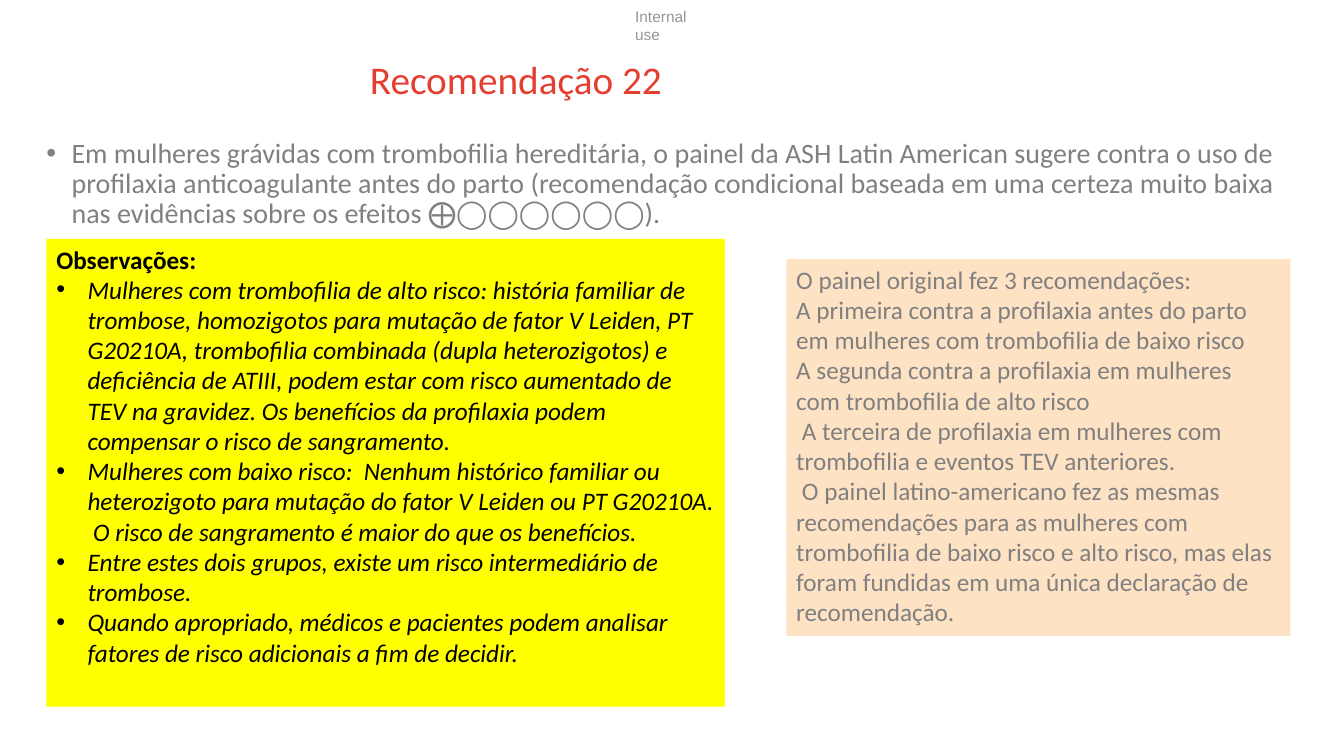
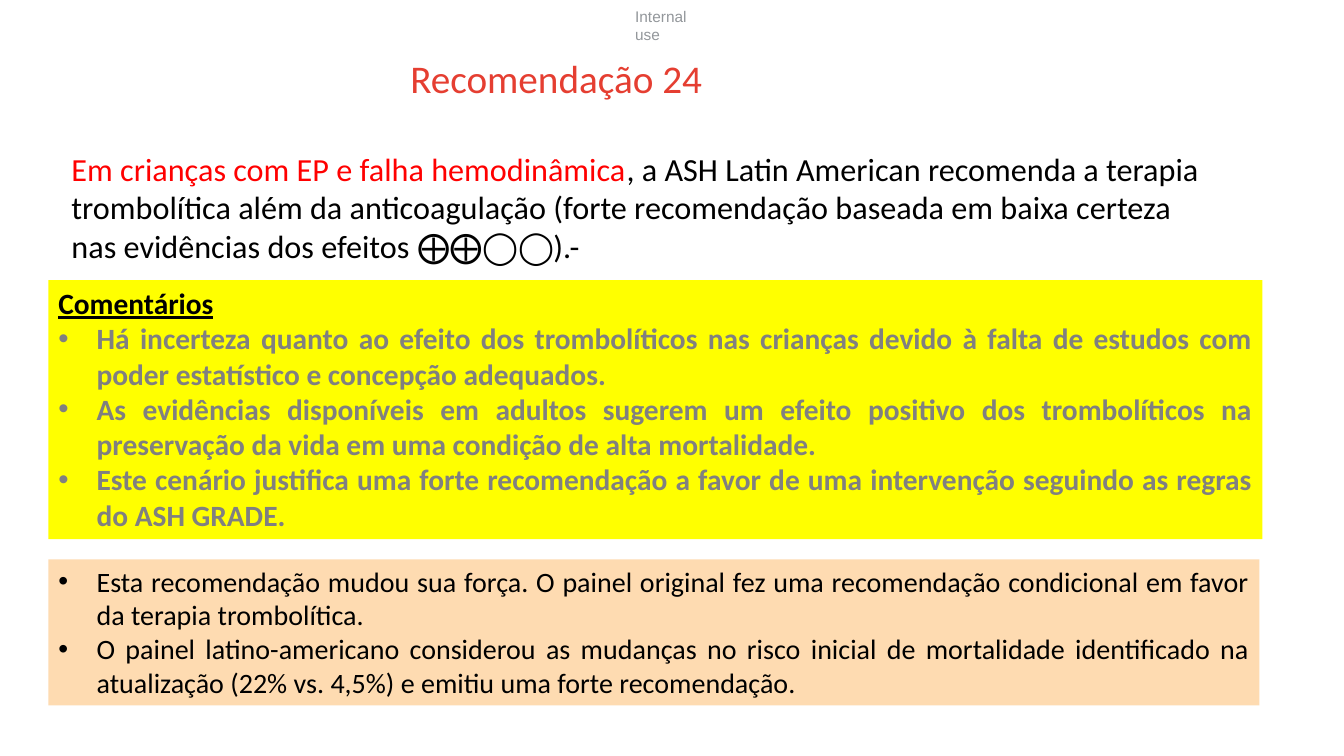
from dataclasses import dataclass, field
from typing import Any, NamedTuple

from lxml import etree
from pptx import Presentation
from pptx.dml.color import RGBColor
from pptx.enum.shapes import MSO_SHAPE
from pptx.enum.text import MSO_ANCHOR, MSO_AUTO_SIZE, PP_ALIGN
from pptx.oxml.ns import qn
from pptx.util import Inches, Pt

RECTANGLE = MSO_SHAPE.RECTANGLE
TOP = MSO_ANCHOR.TOP
FIXED_SIZE = MSO_AUTO_SIZE.NONE
LEFT, JUSTIFY = PP_ALIGN.LEFT, PP_ALIGN.JUSTIFY

SLIDE_WIDTH, SLIDE_HEIGHT = Inches(13.33), Inches(7.5)
BODY_LAYOUT, TITLE_LAYOUT = 1, 5

BLACK = RGBColor(0x00, 0x00, 0x00)
GREY = RGBColor(0x80, 0x80, 0x80)
TAG_GREY = RGBColor(0x93, 0x97, 0x9B)
TITLE_RED = RGBColor(0xE5, 0x3E, 0x31)
RED = RGBColor(0xFF, 0x00, 0x00)
YELLOW = RGBColor(0xFF, 0xFF, 0x00)
LIGHT_PEACH = RGBColor(0xFE, 0xE2, 0xC4)
PEACH = RGBColor(0xFE, 0xDB, 0xB1)

NO_INSETS = {"margin_left": 0, "margin_right": 0, "margin_top": 0, "margin_bottom": 0}
TIGHT = 0.9


class Area(NamedTuple):
    """Position and size in percent of the slide's width and height."""

    left: float
    top: float
    width: float
    height: float

    def lengths(self) -> tuple[int, int, int, int]:
        return (
            round(SLIDE_WIDTH * self.left / 100),
            round(SLIDE_HEIGHT * self.top / 100),
            round(SLIDE_WIDTH * self.width / 100),
            round(SLIDE_HEIGHT * self.height / 100),
        )


@dataclass
class Span:
    text: str
    size: float
    color: RGBColor
    name: str = "Calibri"
    style: dict[str, bool] = field(default_factory=dict)


@dataclass
class Para:
    spans: list[Span]
    indent: float = 0
    align: Any = LEFT
    spacing: float = 1.0


@dataclass
class Panel:
    area: Area
    paras: list[Para]
    fill: RGBColor | None = None


@dataclass
class Page:
    title: str
    title_area: Area
    panels: list[Panel]
    body: Panel | None = None


def set_values(target: Any, values: dict[str, Any]) -> None:
    for name, value in values.items():
        setattr(target, name, value)


def bullet_list(texts: list[str], size: float, color: RGBColor, indent: float,
                align: Any = LEFT, spacing: float = 1.0, **style: bool) -> list[Para]:
    return [Para([Span(text, size, color, style=style)], indent, align, spacing)
            for text in texts]


def add_bullet(para: Any, indent: float) -> None:
    properties = para._p.get_or_add_pPr()
    properties.set("marL", str(Inches(indent)))
    properties.set("indent", str(-Inches(indent)))
    etree.SubElement(properties, qn("a:buFont")).set("typeface", "Arial")
    etree.SubElement(properties, qn("a:buChar")).set("char", "•")


def write_text(box: Any, paras: list[Para], **frame_values: Any) -> None:
    frame = box.text_frame
    set_values(frame, {"word_wrap": True, "auto_size": FIXED_SIZE,
                       "vertical_anchor": TOP, **frame_values})
    for index, content in enumerate(paras):
        para = frame.add_paragraph() if index else frame.paragraphs[0]
        if content.indent:
            add_bullet(para, content.indent)
        set_values(para, {"alignment": content.align, "line_spacing": content.spacing,
                          "space_before": Pt(0)})
        for span in content.spans:
            run = para.add_run()
            run.text = span.text
            set_values(run.font, {"name": span.name, "size": Pt(span.size), **span.style})
            run.font.color.rgb = span.color


def fill_placeholder(box: Any, panel: Panel) -> None:
    names = ("left", "top", "width", "height")
    set_values(box, dict(zip(names, panel.area.lengths())))
    write_text(box, panel.paras, **NO_INSETS)


def add_panel(slide: Any, panel: Panel, **frame_values: Any) -> Any:
    """Draw a filled rectangle, or a plain text box when there is no fill."""
    if panel.fill is None:
        box = slide.shapes.add_textbox(*panel.area.lengths())
    else:
        box = slide.shapes.add_shape(RECTANGLE, *panel.area.lengths())
        box.shadow.inherit = False
        box.fill.solid()
        box.fill.fore_color.rgb = panel.fill
        box.line.fill.background()
    write_text(box, panel.paras, **frame_values)
    return box


def add_page(deck: Any, page: Page) -> Any:
    layout = BODY_LAYOUT if page.body else TITLE_LAYOUT
    slide = deck.slides.add_slide(deck.slide_layouts[layout])
    title = Para([Span(page.title, 28, TITLE_RED)], spacing=TIGHT)
    fill_placeholder(slide.shapes.title, Panel(page.title_area, [title]))
    if page.body:
        fill_placeholder(slide.placeholders[1], page.body)
    for panel in page.panels:
        add_panel(slide, panel)
    return slide


def add_master_tag(deck: Any, slide: Any) -> None:
    """Place the classification tag on the master, so every slide shows it."""
    tag = Panel(Area(47.26, 0.93, 5.85, 2.4),
                [Para([Span("Internal use", 11, TAG_GREY, "Arial")])])
    box = add_panel(slide, tag, **NO_INSETS)
    deck.slide_master.shapes.element.append(box.element)


PREGNANCY = Page(
    "Recomendação 22",
    Area(27.53, 8, 44.49, 6.13),
    body=Panel(Area(3.45, 18.4, 94, 15.87), bullet_list([
        "Em mulheres grávidas com trombofilia hereditária, o painel da ASH Latin American "
        "sugere contra o uso de profilaxia anticoagulante antes do parto (recomendação "
        "condicional baseada em uma certeza muito baixa nas evidências sobre os efeitos "
        "⨁◯◯◯◯◯◯).",
    ], 20, GREY, 0.25, spacing=TIGHT)),
    panels=[
        Panel(Area(3.45, 31.6, 50.49, 61.87), [
            Para([Span("Observações:", 18, BLACK, style={"bold": True})]),
            *bullet_list([
                "Mulheres com trombofilia de alto risco: história familiar de trombose, "
                "homozigotos para mutação de fator V Leiden, PT G20210A, trombofilia "
                "combinada (dupla heterozigotos) e deficiência de ATIII, podem estar com "
                "risco aumentado de TEV na gravidez. Os benefícios da profilaxia podem "
                "compensar o risco de sangramento.",
                "Mulheres com baixo risco:  Nenhum histórico familiar ou heterozigoto para "
                "mutação do fator V Leiden ou PT G20210A.  O risco de sangramento é maior "
                "do que os benefícios.",
                "Entre estes dois grupos, existe um risco intermediário de trombose.",
                "Quando apropriado, médicos e pacientes podem analisar fatores de risco "
                "adicionais a fim de decidir.",
            ], 18, BLACK, 0.31, italic=True),
        ], YELLOW),
        Panel(Area(58.51, 34.27, 37.51, 49.87), [
            Para([Span(text, 18, GREY)]) for text in (
                "O painel original fez 3 recomendações:",
                "A primeira contra a profilaxia antes do parto em mulheres com trombofilia "
                "de baixo risco",
                "A segunda contra a profilaxia em mulheres com trombofilia de alto risco",
                " A terceira de profilaxia em mulheres com trombofilia e eventos TEV "
                "anteriores.",
                " O painel latino-americano fez as mesmas recomendações para as mulheres "
                "com trombofilia de baixo risco e alto risco, mas elas foram fundidas em "
                "uma única declaração de recomendação.",
            )
        ], LIGHT_PEACH),
    ],
)

CHILDREN = Page(
    "Recomendação 24",
    Area(30.53, 7.87, 22.66, 6.13),
    panels=[
        Panel(Area(3.6, 37.07, 90.32, 34.27), [
            Para([Span("Comentários", 21, BLACK,
                       style={"bold": True, "underline": True})]),
            *bullet_list([
                "Há incerteza quanto ao efeito dos trombolíticos nas crianças devido à "
                "falta de estudos com poder estatístico e concepção adequados.",
                "As evidências disponíveis em adultos sugerem um efeito positivo dos "
                "trombolíticos na preservação da vida em uma condição de alta mortalidade.",
                "Este cenário justifica uma forte recomendação a favor de uma intervenção "
                "seguindo as regras do ASH GRADE.",
            ], 21, GREY, 0.38, JUSTIFY, bold=True),
        ], YELLOW),
        Panel(Area(4.58, 19.07, 86.42, 16.8), [Para([
            Span("Em crianças com EP e falha hemodinâmica", 23, RED),
            Span(", a ASH Latin American recomenda a terapia trombolítica além da "
                 "anticoagulação (forte recomendação baseada em baixa certeza nas "
                 "evidências dos efeitos ⨁⨁◯◯).-", 23, BLACK),
        ])]),
        Panel(Area(3.6, 74, 90.1, 19.33), bullet_list([
            "Esta recomendação mudou sua força. O painel original fez uma recomendação "
            "condicional em favor da terapia trombolítica.",
            "O painel latino-americano considerou as mudanças no risco inicial de "
            "mortalidade identificado na atualização (22% vs. 4,5%) e emitiu uma forte "
            "recomendação.",
        ], 20, BLACK, 0.38, JUSTIFY), PEACH),
    ],
)


def main() -> None:
    deck = Presentation()
    set_values(deck, {"slide_width": SLIDE_WIDTH, "slide_height": SLIDE_HEIGHT})
    slides = [add_page(deck, page) for page in (PREGNANCY, CHILDREN)]
    add_master_tag(deck, slides[0])
    deck.save("out.pptx")


if __name__ == "__main__":
    main()
